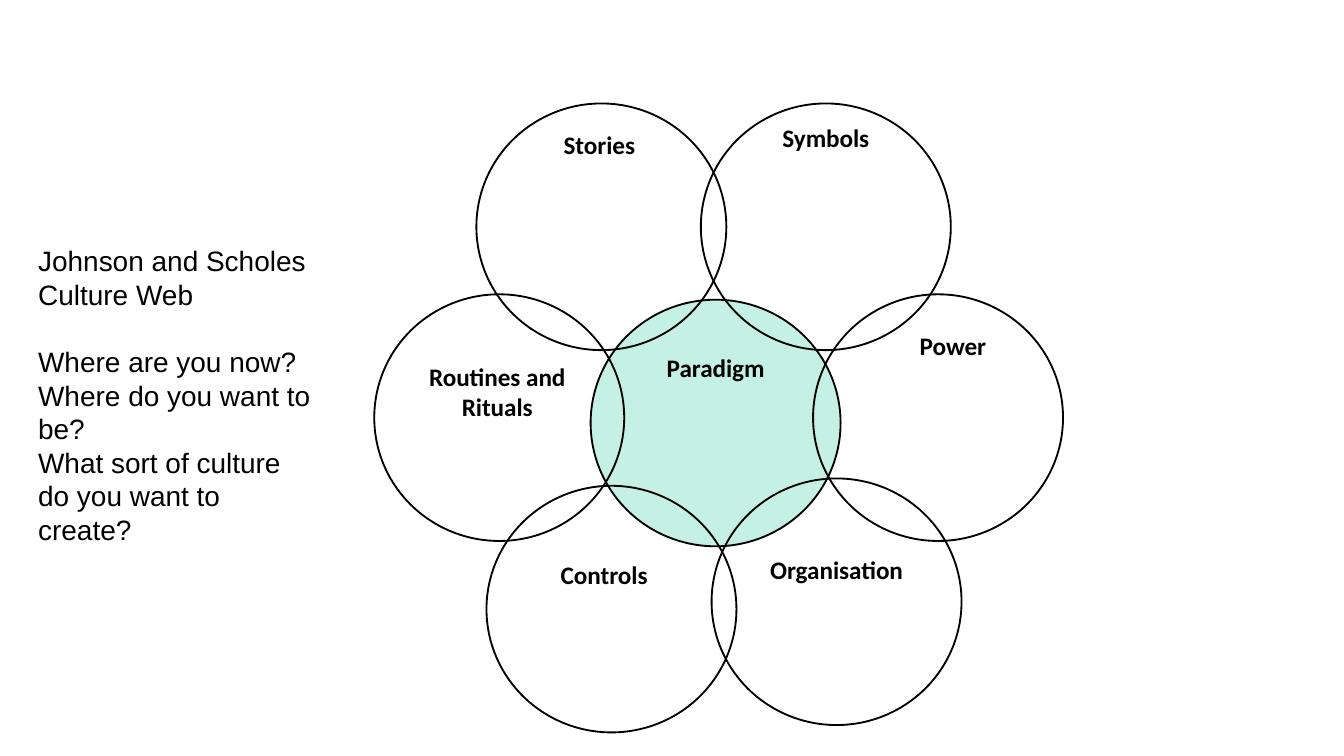
import pptx
import pptx.util
import pptx.dml.color
import pptx.enum.shapes
import pptx.enum.text
import pptx.oxml
import pptx.oxml.ns

EMU_PER_PX = 4572
BLACK = pptx.dml.color.RGBColor(0x00, 0x00, 0x00)
MINT = pptx.dml.color.RGBColor(0x74, 0xE0, 0xC1)
CIRCLE_WIDTH, CIRCLE_HEIGHT = 372, 367
LABEL_HEIGHT = 66


def px(length):
    return pptx.util.Emu(length * EMU_PER_PX)


class CultureWebSlide:
    def __init__(self, slide):
        self.shapes = slide.shapes

    def circle(self, left, top, color=None, opacity=100):
        circle = self.shapes.add_shape(
            pptx.enum.shapes.MSO_SHAPE.OVAL,
            px(left), px(top), px(CIRCLE_WIDTH), px(CIRCLE_HEIGHT))
        circle.shadow.inherit = False
        circle.line.color.rgb = BLACK
        circle.line.width = pptx.util.Pt(1)
        if color is None:
            circle.fill.background()
            return
        circle.fill.solid()
        circle.fill.fore_color.rgb = color
        tint = circle.fill._xPr.find(".//" + pptx.oxml.ns.qn("a:srgbClr"))
        alpha = pptx.oxml.parse_xml(
            f'<a:alpha {pptx.oxml.ns.nsdecls("a")} val="{opacity * 1000}"/>')
        tint.append(alpha)

    def text_frame(self, left, top, width, height):
        frame = self.shapes.add_textbox(
            px(left), px(top), px(width), px(height)).text_frame
        frame.word_wrap = True
        frame.auto_size = pptx.enum.text.MSO_AUTO_SIZE.SHAPE_TO_FIT_TEXT
        return frame

    def run(self, paragraph, text, font_name, size, bold=False):
        run = paragraph.add_run()
        run.text = text
        run.font.name = font_name
        run.font.size = pptx.util.Pt(size)
        run.font.bold = bold
        run.font.color.rgb = BLACK

    def label(self, text, left, top, width=188, height=LABEL_HEIGHT):
        paragraph = self.text_frame(left, top, width, height).paragraphs[0]
        paragraph.alignment = pptx.enum.text.PP_ALIGN.CENTER
        self.run(paragraph, text, "Calibri", 13.5, bold=True)

    def questions(self, heading, questions, left, top, width, height):
        frame = self.text_frame(left, top, width, height)
        for index, text in enumerate([heading, *questions]):
            paragraph = frame.add_paragraph() if index else frame.paragraphs[0]
            paragraph.line_spacing = pptx.util.Pt(18)
            if index == 1:
                paragraph.space_before = pptx.util.Pt(18)
            self.run(paragraph, text, "Arial", 15)


def main():
    presentation = pptx.Presentation()
    presentation.slide_width = px(2000)
    presentation.slide_height = px(1125)
    web = CultureWebSlide(
        presentation.slides.add_slide(presentation.slide_layouts[6]))

    web.circle(879, 446, MINT, 42)
    for left, top in [(557, 438), (724, 723), (1059, 712),
                      (1043, 154), (709, 154), (1210, 438)]:
        web.circle(left, top)

    web.label("Routines and Rituals", 575, 528, 330, 112)
    web.label("Controls", 805, 823)
    web.label("Organisation", 1118, 815, 254)
    web.label("Stories", 798, 183)
    web.label("Symbols", 1135, 172)
    web.label("Power", 1324, 482)
    web.label("Paradigm", 971, 515)

    web.questions(
        "Johnson and Scholes Culture Web",
        ["Where are you now?",
         "Where do you want to be?",
         "What sort of culture do you want to create?"],
        37, 353, 450, 474)

    presentation.save("out.pptx")


if __name__ == "__main__":
    main()
